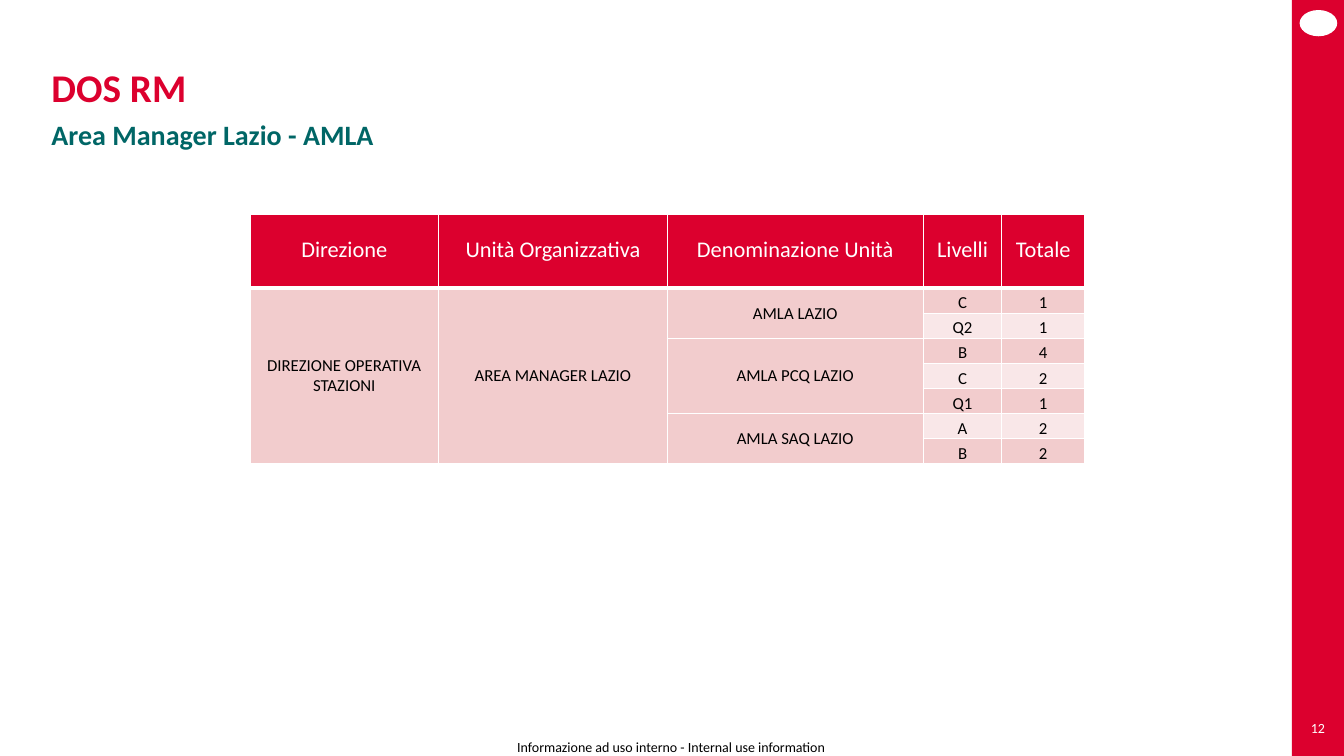
from dataclasses import dataclass

from lxml import etree
from pptx import Presentation
from pptx.dml.color import RGBColor
from pptx.enum.shapes import MSO_SHAPE
from pptx.enum.text import MSO_ANCHOR, PP_ALIGN
from pptx.oxml.ns import qn
from pptx.util import Inches, Pt

RECT, OVAL = MSO_SHAPE.RECTANGLE, MSO_SHAPE.OVAL
TOP, MIDDLE, BOTTOM = MSO_ANCHOR.TOP, MSO_ANCHOR.MIDDLE, MSO_ANCHOR.BOTTOM
LEFT, CENTER = PP_ALIGN.LEFT, PP_ALIGN.CENTER
WIDTH, HEIGHT = Inches(13.33), Inches(7.5)


@dataclass(frozen=True)
class Theme:
    font: str = "Calibri"
    red: str = "DC002E"
    teal: str = "006666"
    white: str = "FFFFFF"
    black: str = "000000"
    band_dark: str = "F2CCCD"
    band_light: str = "F9E7E8"
    title: int = 28
    subtitle: int = 20
    header: int = 16
    cell: int = 12
    small: int = 10


THEME = Theme()

# Table content: column widths and row heights in percent of the slide
COLUMNS = [("Direzione", 14.03), ("Unità Organizzativa", 17.02),
           ("Denominazione Unità", 19.05), ("Livelli", 5.85), ("Totale", 6.15)]
HEADER_ROW, BODY_ROW = 9.73, 3.32
DIREZIONE = "DIREZIONE OPERATIVA STAZIONI"
AREA = "AREA MANAGER LAZIO"
UNITS = [
    ("AMLA LAZIO", [("C", 1), ("Q2", 1)]),
    ("AMLA PCQ LAZIO", [("B", 4), ("C", 2), ("Q1", 1)]),
    ("AMLA SAQ LAZIO", [("A", 2), ("B", 2)]),
]


def x(percent):
    return round(WIDTH * percent / 100)


def y(percent):
    return round(HEIGHT * percent / 100)


def style(p, size, color, bold=False, align=LEFT):
    p.alignment = align
    p.font.name = THEME.font
    p.font.size = Pt(size)
    p.font.bold = bold
    p.font.color.rgb = RGBColor.from_string(color)


def add_block(s, kind, left, top, width, height, color):
    sp = s.shapes.add_shape(kind, x(left), y(top), x(width), y(height))
    sp.shadow.inherit = False
    sp.fill.solid()
    sp.fill.fore_color.rgb = RGBColor.from_string(color)
    sp.line.fill.background()


def add_text(s, text, left, top, width, height, size, color,
             bold=False, align=LEFT, anchor=TOP, inset=0, spacing=1.0):
    tf = s.shapes.add_textbox(x(left), y(top), x(width), y(height)).text_frame
    tf.word_wrap = True
    tf.vertical_anchor = anchor
    tf.margin_left = tf.margin_right = 0
    tf.margin_top = tf.margin_bottom = Inches(inset)
    p = tf.paragraphs[0]
    p.text = text
    p.line_spacing = spacing
    style(p, size, color, bold, align)


def add_borders(cell, bottom, top):
    tc_pr = cell._tc.get_or_add_tcPr()
    for side, width in (("L", 1), ("R", 1), ("T", top), ("B", bottom)):
        ln = etree.SubElement(tc_pr, qn(f"a:ln{side}"), w=str(Pt(width)))
        fill = etree.SubElement(ln, qn("a:solidFill"))
        etree.SubElement(fill, qn("a:srgbClr"), val=THEME.white)


def format_cell(cell, fill, top=1, bottom=1):
    add_borders(cell, bottom, top)
    cell.fill.solid()
    cell.fill.fore_color.rgb = RGBColor.from_string(fill)
    cell.margin_left = cell.margin_right = 0
    cell.margin_top = cell.margin_bottom = 0


def write_cell(cell, text, size, color, anchor):
    cell.vertical_anchor = anchor
    p = cell.text_frame.paragraphs[0]
    p.text = str(text)
    style(p, size, color, align=CENTER)


def write_group(table, row, col, span, text):
    cell = table.cell(row, col)
    cell.merge(table.cell(row + span - 1, col))
    write_cell(cell, text, THEME.cell, THEME.black, MIDDLE)


def add_staff_table(s, left, top):
    body = sum(len(levels) for _, levels in UNITS)
    width = sum(share for _, share in COLUMNS)
    table = s.shapes.add_table(body + 1, len(COLUMNS), x(left), y(top), x(width),
                               y(HEADER_ROW + body * BODY_ROW)).table
    table.first_row = table.horz_banding = False
    for i, row in enumerate(table.rows):
        row.height = y(BODY_ROW if i else HEADER_ROW)

    # Header row and banded fills
    for col, (heading, share) in enumerate(COLUMNS):
        table.columns[col].width = x(share)
        header = table.cell(0, col)
        format_cell(header, THEME.red, bottom=3)
        header.margin_bottom = Inches(0.25)
        write_cell(header, heading, THEME.header, THEME.white, BOTTOM)
        for row in range(1, body + 1):
            light = col > 2 and row % 2 == 0
            format_cell(table.cell(row, col),
                        THEME.band_light if light else THEME.band_dark,
                        top=3 if row == 1 else 1)

    # Merged groups and the levels within each unit
    write_group(table, 1, 0, body, DIREZIONE)
    write_group(table, 1, 1, body, AREA)
    row = 1
    for unit, levels in UNITS:
        write_group(table, row, 2, len(levels), unit)
        for values in levels:
            for col, value in enumerate(values, start=3):
                write_cell(table.cell(row, col), value, THEME.cell, THEME.black, BOTTOM)
            row += 1


def main():
    prs = Presentation()
    prs.slide_width, prs.slide_height = WIDTH, HEIGHT
    s = prs.slides.add_slide(prs.slide_layouts[6])

    # Side band with emblem and slide number
    add_block(s, RECT, 96.13, 0, 3.87, 100, THEME.red)
    add_block(s, OVAL, 96.7, 1.33, 2.8, 3.47, THEME.white)
    add_text(s, "12", 96.13, 94.67, 3.87, 3.33, THEME.small, THEME.white,
             align=CENTER, anchor=MIDDLE)

    # Headings
    add_text(s, "DOS RM", 3.83, 8.4, 91.7, 7, THEME.title, THEME.red,
             bold=True, inset=0.05, spacing=0.9)
    add_text(s, "Area Manager Lazio - AMLA", 3.83, 15.33, 91.7, 5.73,
             THEME.subtitle, THEME.teal, bold=True, inset=0.05, spacing=0.9)

    add_staff_table(s, 18.6, 28.4)

    # Footer
    add_text(s, "Informazione ad uso interno - Internal use information",
             38.48, 97.73, 23.26, 2.27, THEME.small, THEME.black)

    prs.save("out.pptx")


if __name__ == "__main__":
    main()
